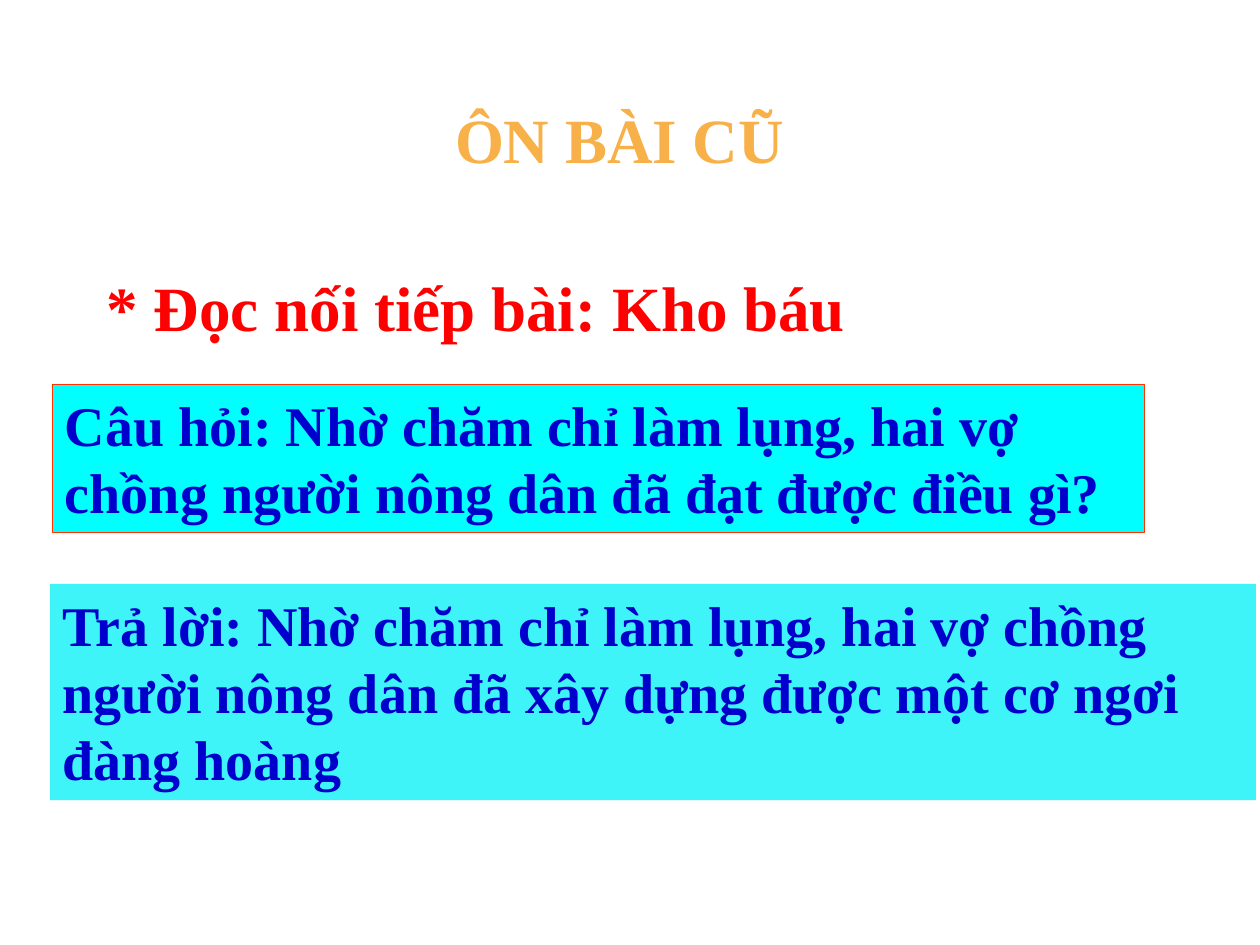
from dataclasses import dataclass
from typing import Optional

from pptx import Presentation
from pptx.dml.color import RGBColor
from pptx.enum import shapes, text
from pptx.util import Cm, Pt


@dataclass(frozen=True)
class Theme:
    font: str = "Times New Roman"
    heading: int = 36
    body: int = 32
    title: str = "F8B049"
    reading: str = "FF0000"
    ink: str = "0000CC"
    question_fill: str = "00FFFF"
    question_line: str = "FF3300"
    answer_fill: str = "3EF4F8"


@dataclass(frozen=True)
class Box:
    words: str
    left: float
    top: float
    width: float
    height: float
    size: int
    color: str
    fill: Optional[str] = None
    line: Optional[str] = None


THEME = Theme()
TITLE = Box("ÔN BÀI CŨ", 6.99, 1.9, 11, 2.11, THEME.heading, THEME.title)
BOXES = [
    Box("Câu hỏi: Nhờ chăm chỉ làm lụng, hai vợ chồng người nông dân đã đạt được điều gì?",
        1.06, 7.75, 22.01, 2.99, THEME.body, THEME.ink,
        THEME.question_fill, THEME.question_line),
    Box("Trả lời: Nhờ chăm chỉ làm lụng, hai vợ chồng người nông dân đã xây dựng được "
        "một cơ ngơi đàng hoàng",
        1.01, 11.77, 24.31, 4.36, THEME.body, THEME.ink, THEME.answer_fill),
    Box("* Đọc nối tiếp bài: Kho báu",
        1.9, 5.29, 15.66, 1.8, THEME.heading, THEME.reading),
]


def write(sp, box: Box, align: text.PP_ALIGN, fit: text.MSO_AUTO_SIZE) -> None:
    tf = sp.text_frame
    tf.word_wrap = True
    tf.auto_size = fit
    tf.vertical_anchor = text.MSO_ANCHOR.TOP
    p = tf.paragraphs[0]
    p.text = box.words
    p.alignment = align
    p.font.name = THEME.font
    p.font.size = Pt(box.size)
    p.font.bold = True
    p.font.color.rgb = RGBColor.from_string(box.color)


def draw_title(s, box: Box) -> None:
    sp = s.shapes.title
    sp.left, sp.top = Cm(box.left), Cm(box.top)
    sp.width, sp.height = Cm(box.width), Cm(box.height)
    write(sp, box, text.PP_ALIGN.CENTER, text.MSO_AUTO_SIZE.NONE)


def draw_box(s, box: Box) -> None:
    place = Cm(box.left), Cm(box.top), Cm(box.width), Cm(box.height)
    if box.fill:
        sp = s.shapes.add_shape(shapes.MSO_SHAPE.RECTANGLE, *place)
        sp.shadow.inherit = False
        sp.fill.solid()
        sp.fill.fore_color.rgb = RGBColor.from_string(box.fill)
        if box.line:
            sp.line.color.rgb = RGBColor.from_string(box.line)
            sp.line.width = Pt(0.75)
        else:
            sp.line.fill.background()
    else:
        sp = s.shapes.add_textbox(*place)
    write(sp, box, text.PP_ALIGN.LEFT, text.MSO_AUTO_SIZE.SHAPE_TO_FIT_TEXT)


def main() -> None:
    prs = Presentation()
    prs.slide_width, prs.slide_height = Cm(25.4), Cm(19.05)
    s = prs.slides.add_slide(prs.slide_layouts.get_by_name("Title Only"))
    draw_title(s, TITLE)
    for box in BOXES:
        draw_box(s, box)
    prs.save("out.pptx")


if __name__ == "__main__":
    main()
